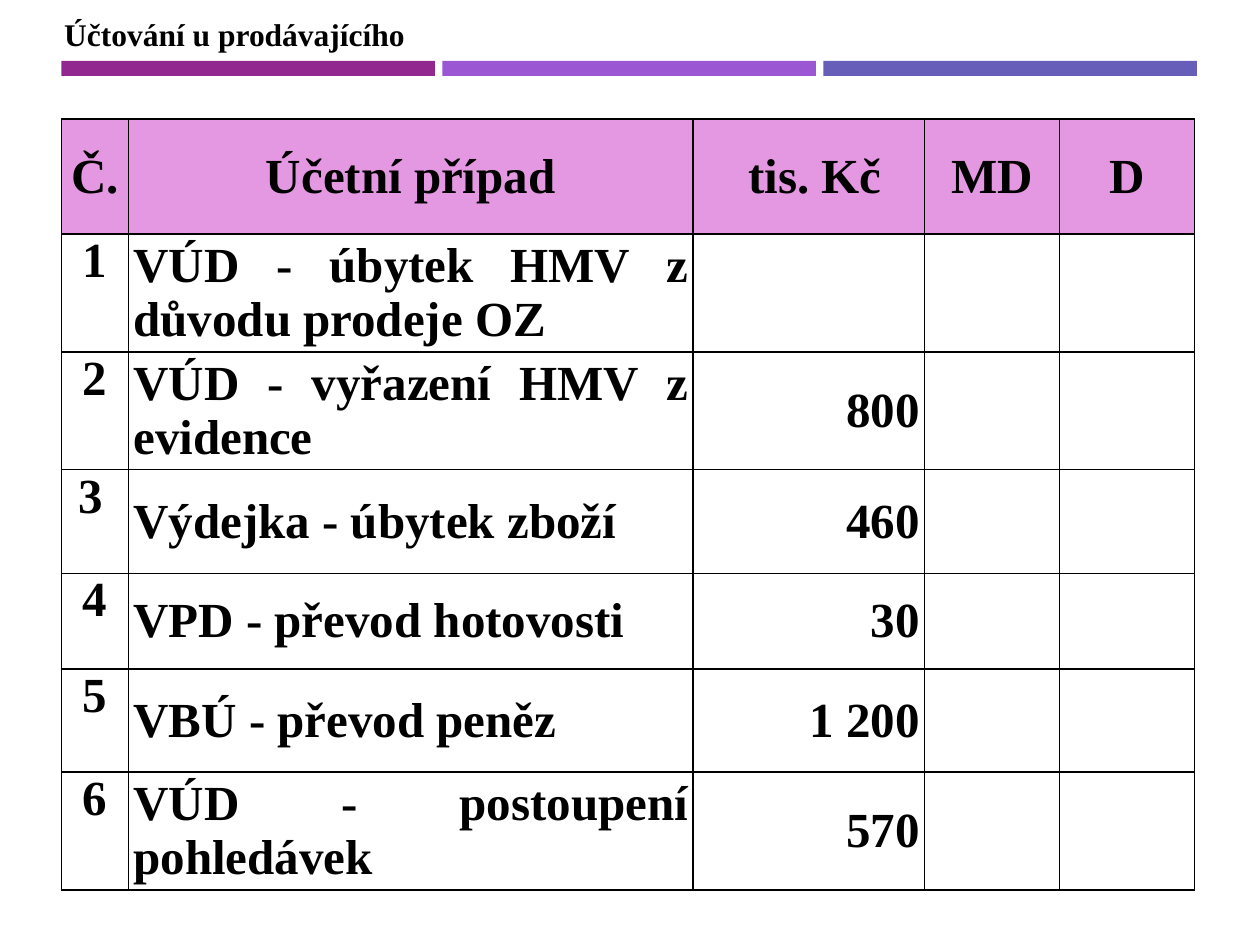
from lxml import etree
from pptx import Presentation
from pptx import util as u
from pptx.dml.color import RGBColor
from pptx.enum import shapes, text
from pptx.oxml import ns

BLACK = RGBColor(0x00, 0x00, 0x00)
HEADER_PINK = RGBColor(0xE4, 0x98, 0xE1)
BAR_COLORS = (
    RGBColor(0x92, 0x27, 0x8F),
    RGBColor(0x9B, 0x57, 0xD3),
    RGBColor(0x66, 0x5E, 0xB8),
)
FONT = "Times New Roman"
LEFT = 1.24

COLUMN_WIDTHS = (1.35, 11.38, 4.67, 2.72, 2.72)
ROW_HEIGHTS = (2.32, 2.37, 2.37, 2.09, 1.93, 2.08, 2.37)
HEADINGS = ("Č.", "Účetní případ", " tis. Kč", "MD", "D")
ENTRIES = (
    ("1", "VÚD - úbytek HMV z důvodu prodeje OZ", ""),
    ("2", "VÚD - vyřazení HMV z evidence", "800"),
    (" 3", "Výdejka - úbytek zboží", "460"),
    ("4", "VPD - převod hotovosti", "30"),
    ("5", "VBÚ - převod peněz", "1 200"),
    ("6", "VÚD - postoupení pohledávek", "570"),
)
ALIGN = text.PP_ALIGN
ENTRY_ALIGNMENTS = (ALIGN.CENTER, ALIGN.JUSTIFY, ALIGN.RIGHT)


def add_text(paragraph, wording, size, alignment):
    paragraph.alignment = alignment
    run = paragraph.add_run()
    run.text = wording
    run.font.name = FONT
    run.font.size = u.Pt(size)
    run.font.bold = True
    run.font.color.rgb = BLACK


def add_bars(slide):
    for index, color in enumerate(BAR_COLORS):
        bar = slide.shapes.add_shape(
            shapes.MSO_SHAPE.RECTANGLE,
            u.Cm(LEFT + index * 7.68), u.Cm(1.23), u.Cm(7.53), u.Cm(0.3))
        bar.shadow.inherit = False
        bar.fill.solid()
        bar.fill.fore_color.rgb = color
        bar.line.fill.background()


def set_title(slide, wording):
    title = slide.shapes.title
    title.left, title.top = u.Cm(1.04), u.Cm(0.18)
    title.width, title.height = u.Cm(7.44), u.Cm(1.02)
    frame = title.text_frame
    frame.word_wrap = False
    frame.auto_size = text.MSO_AUTO_SIZE.SHAPE_TO_FIT_TEXT
    frame.vertical_anchor = text.MSO_ANCHOR.TOP
    add_text(frame.paragraphs[0], wording, 18, ALIGN.LEFT)


def add_borders(cell):
    properties = cell._tc.get_or_add_tcPr()
    for side in ("lnL", "lnR", "lnT", "lnB"):
        border = etree.SubElement(properties, ns.qn(f"a:{side}"), w=str(u.Pt(1)))
        fill = etree.SubElement(border, ns.qn("a:solidFill"))
        etree.SubElement(fill, ns.qn("a:srgbClr"), val=str(BLACK))


def fill_cell(cell, wording, alignment, anchor):
    cell.margin_left = cell.margin_right = u.Cm(0.1)
    cell.margin_top = cell.margin_bottom = 0
    cell.vertical_anchor = anchor
    add_text(cell.text_frame.paragraphs[0], wording, 28, alignment)


def add_entries_table(slide):
    table = slide.shapes.add_table(
        len(ROW_HEIGHTS), len(COLUMN_WIDTHS), u.Cm(LEFT), u.Cm(2.4),
        u.Cm(sum(COLUMN_WIDTHS)), u.Cm(sum(ROW_HEIGHTS))).table
    table.first_row = table.horz_banding = False
    for column, width in zip(table.columns, COLUMN_WIDTHS):
        column.width = u.Cm(width)
    for row, height in zip(table.rows, ROW_HEIGHTS):
        row.height = u.Cm(height)
    for cell in table.iter_cells():
        add_borders(cell)
        cell.fill.background()

    # Heading row
    for cell, heading in zip(table.rows[0].cells, HEADINGS):
        cell.fill.solid()
        cell.fill.fore_color.rgb = HEADER_PINK
        fill_cell(cell, heading, ALIGN.CENTER, text.MSO_ANCHOR.MIDDLE)

    # Accounting entries: number, description, amount
    for row_index, entry in enumerate(ENTRIES, start=1):
        for column_index, wording in enumerate(entry):
            if not wording:
                continue
            is_number = column_index == 0
            alignment = ENTRY_ALIGNMENTS[column_index]
            if is_number and len(wording) > 1:
                alignment = ALIGN.LEFT
            anchor = text.MSO_ANCHOR.TOP if is_number else text.MSO_ANCHOR.MIDDLE
            fill_cell(table.cell(row_index, column_index), wording, alignment, anchor)


def main():
    deck = Presentation()
    deck.slide_width, deck.slide_height = u.Cm(25.4), u.Cm(19.05)
    slide = deck.slides.add_slide(deck.slide_layouts.get_by_name("Title Only"))
    add_bars(slide)
    set_title(slide, "Účtování u prodávajícího")
    add_entries_table(slide)
    deck.save("out.pptx")


if __name__ == "__main__":
    main()
